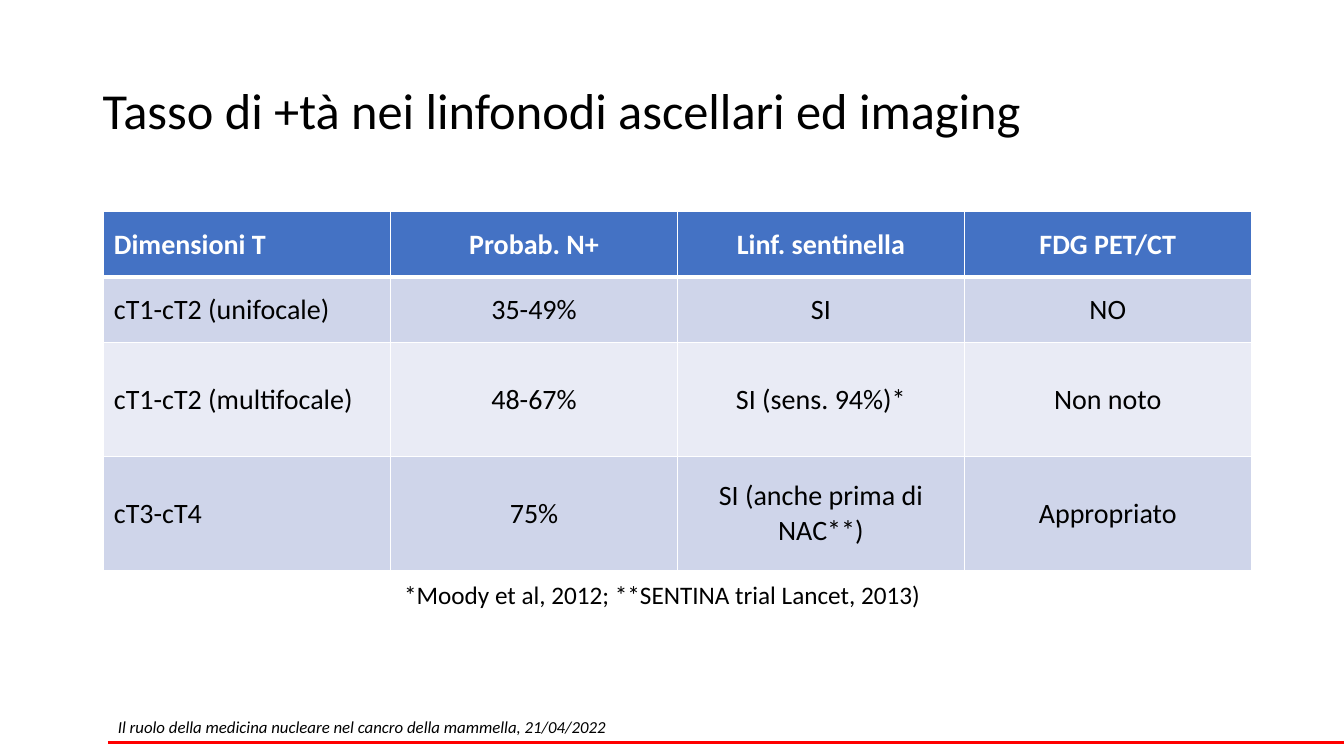
from lxml import etree
from pptx import Presentation
from pptx.dml.color import RGBColor
from pptx.enum.shapes import MSO_CONNECTOR
from pptx.enum.text import MSO_ANCHOR as Anchor, PP_ALIGN as Align
from pptx.oxml import parse_xml
from pptx.oxml.ns import nsdecls, qn
from pptx.util import Inches, Pt

# Content
TITLE = "Tasso di +tà nei linfonodi ascellari ed imaging"
NODES = [
    ("Dimensioni T", "Probab. N+", "Linf. sentinella", "FDG PET/CT"),
    ("cT1-cT2 (unifocale)", "35-49%", "SI", "NO"),
    ("cT1-cT2 (multifocale)", "48-67%", "SI (sens. 94%)*", "Non noto"),
    ("cT3-cT4", "75%", "SI (anche prima di NAC**)", "Appropriato"),
]
CITATION = "*Moody et al, 2012; **SENTINA trial Lancet, 2013)"
FOOTER = "Il ruolo della medicina nucleare nel cancro della mammella, 21/04/2022"

# Layout, in inches
WIDTH, HEIGHT = 13.33, 7.5
TABLE_LEFT, TABLE_TOP, TABLE_WIDTH = 1.03, 2.1, 11.38
ROW_HEIGHTS = [0.65, 0.65, 1.13, 1.13]
FOOTER_LEFT, RULE_TOP = 1.07, 7.37

BLACK, WHITE, RED = "000000", "FFFFFF", "FF0000"
HEADER_FILL, BANDS = "4472C4", ("CFD5EA", "E9EBF5")


def color(code):
    return RGBColor.from_string(code)


def write(frame, text, size, ink=BLACK, bold=False, italic=False):
    frame.text = text
    font = frame.paragraphs[0].runs[0].font
    font.name, font.size = "Calibri", Pt(size)
    font.bold, font.italic = bold, italic
    font.color.rgb = color(ink)


def add_text(slide, box, text, size, wrap=True, anchor=Anchor.TOP, **style):
    frame = slide.shapes.add_textbox(*map(Inches, box)).text_frame
    frame.word_wrap, frame.vertical_anchor = wrap, anchor
    write(frame, text, size, **style)
    return frame


def set_borders(cell, widths):
    props = cell._tc.get_or_add_tcPr()
    for index, (side, points) in enumerate(widths.items()):
        props.insert(index, parse_xml(
            f'<a:ln{side} {nsdecls("a")} w="{Pt(points)}"><a:solidFill>'
            f'<a:srgbClr val="{WHITE}"/></a:solidFill></a:ln{side}>'))


def add_nodes_table(slide):
    box = (TABLE_LEFT, TABLE_TOP, TABLE_WIDTH, sum(ROW_HEIGHTS))
    table = slide.shapes.add_table(
        len(NODES), len(NODES[0]), *map(Inches, box)).table
    for column in table.columns:
        column.width = Inches(TABLE_WIDTH / len(NODES[0]))
    for r, entries in enumerate(NODES):
        table.rows[r].height = Inches(ROW_HEIGHTS[r])
        header = r == 0
        for c, entry in enumerate(entries):
            cell = table.cell(r, c)
            cell.vertical_anchor = Anchor.MIDDLE
            cell.fill.solid()
            cell.fill.fore_color.rgb = color(
                HEADER_FILL if header else BANDS[(r - 1) % 2])
            write(cell.text_frame, entry, 20,
                  ink=WHITE if header else BLACK, bold=header)
            cell.text_frame.paragraphs[0].alignment = (
                Align.CENTER if c else Align.LEFT)
            # Thick line between the header and the body
            set_borders(cell, {"L": 1, "R": 1, "T": 3 if r == 1 else 1,
                               "B": 3 if header else 1})


def add_footer_rule(slide):
    rule = slide.shapes.add_connector(
        MSO_CONNECTOR.STRAIGHT, Inches(FOOTER_LEFT), Inches(RULE_TOP),
        Inches(WIDTH), Inches(RULE_TOP))
    rule.line.color.rgb = color(RED)
    rule.line.width = Pt(2.25)
    etree.SubElement(rule._element.spPr, qn("a:effectLst"))


def main():
    deck = Presentation()
    deck.slide_width, deck.slide_height = Inches(WIDTH), Inches(HEIGHT)
    slide = deck.slides.add_slide(deck.slide_layouts[6])

    # Title
    title = add_text(slide, (0.92, 0.4, 11.5, 1.45), TITLE, 36,
                     anchor=Anchor.MIDDLE)
    title.paragraphs[0].line_spacing = 0.9

    # Table and its sources
    add_nodes_table(slide)
    add_text(slide, (3.91, 5.7, 6.93, 0.4), CITATION, 18)

    # Footer
    add_footer_rule(slide)
    add_text(slide, (FOOTER_LEFT, 7.06, 5.18, 0.3), FOOTER, 12,
             wrap=False, italic=True)

    deck.save("out.pptx")


if __name__ == "__main__":
    main()
